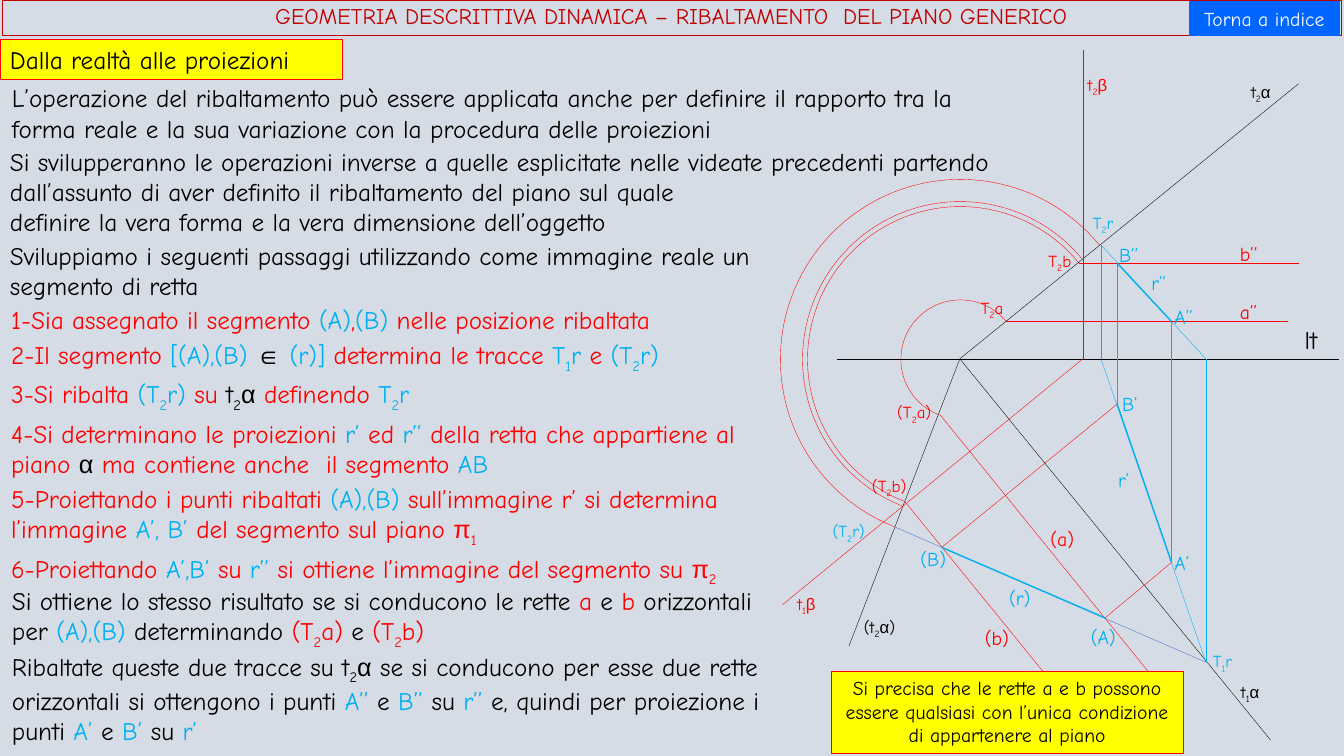
from dataclasses import dataclass, field
from itertools import groupby

from pptx import Presentation
from pptx import util as u
from pptx.dml import color
from pptx.enum import shapes, text
from pptx.oxml import ns, xmlchemy


@dataclass(frozen=True)
class Theme:
    font: str = "Comic Neue"
    symbol_font: str = "Arial"
    symbols: str = "αβπ∈"
    title: int = 16
    body: int = 18
    label: int = 14
    trace: int = 12
    thin: float = 0.25
    bold: float = 1
    # One letter per colour: K black, R red, C cyan, D dark red, W white,
    # Y yellow, B button blue, L line blue, G background grey
    colours: dict = field(default_factory=lambda: {
        key: color.RGBColor.from_string(value) for key, value in {
            "K": "000000", "R": "FF0000", "C": "00B0F0", "D": "C00000", "W": "FFFFFF",
            "Y": "FFFF00", "B": "0066FF", "L": "4472C4", "G": "D6DCE5"}.items()})


theme = Theme()


def write(frame, content, size, frame_format=None, para_format=None):
    """Parts split by | start with a colour letter; _ lowers the next character."""
    frame_values = {"word_wrap": True, "auto_size": text.MSO_AUTO_SIZE.NONE,
                    "vertical_anchor": text.MSO_ANCHOR.TOP, **(frame_format or {})}
    for name, value in frame_values.items():
        setattr(frame, name, value)
    for index, line in enumerate(content.split("\n")):
        para = frame.add_paragraph() if index else frame.paragraphs[0]
        para_values = {"alignment": text.PP_ALIGN.LEFT, **(para_format or {})}
        for name, value in para_values.items():
            setattr(para, name, value)
        for part in line.split("|"):
            marked = [(char, "sub" if before == "_" else
                       "symbol" if char in theme.symbols else "plain")
                      for before, char in zip(part, part[1:]) if char != "_"]
            for kind, group in groupby(marked, key=lambda item: item[1]):
                span = para.add_run()
                span.text = "".join(char for char, _ in group)
                font_values = {"size": u.Pt(size), "bold": span.text == "∈",
                               "name": theme.symbol_font if kind == "symbol" else theme.font}
                for name, value in font_values.items():
                    setattr(span.font, name, value)
                span.font.color.rgb = theme.colours[part[0]]
                if kind == "sub":
                    span.font._element.set("baseline", "-25000")


def add_panel(kind, place, fill=None, line=None):
    panel = page.shapes.add_shape(kind, *map(u.Inches, place))
    panel.shadow.inherit = False
    if fill:
        panel.fill.solid()
        panel.fill.fore_color.rgb = theme.colours[fill]
    else:
        panel.fill.background()
    if line:
        panel.line.color.rgb = theme.colours[line]
        panel.line.width = u.Pt(theme.thin)
    else:
        panel.line.fill.background()
    return panel


deck = Presentation()
deck.slide_width, deck.slide_height = u.Inches(13.33), u.Inches(7.5)
page = deck.slides.add_slide(deck.slide_layouts[1])
page.background.fill.solid()
page.background.fill.fore_color.rgb = theme.colours["G"]
centred = {"alignment": text.PP_ALIGN.CENTER}
middle = {"vertical_anchor": text.MSO_ANCHOR.MIDDLE}

# Title bar and numbered steps in the placeholders
title, steps = page.placeholders
for box, place in ((title, (0.02, 0, 13.28, 0.35)), (steps, (0.01, 2.97, 7.8, 2.79))):
    for name, value in zip(("left", "top", "width", "height"), place):
        setattr(box, name, u.Inches(value))
title.line.color.rgb = theme.colours["D"]
title.line.width = u.Pt(theme.thin)
write(title.text_frame, "DGEOMETRIA DESCRITTIVA DINAMICA – RIBALTAMENTO  DEL PIANO GENERICO",
      theme.title, middle, {**centred, "line_spacing": 0.9})
write(steps.text_frame, "\n".join((
    "R1-Sia assegnato il segmento |C(A)|R,|C(B) |Rnelle posizione ribaltata",
    "R2-Il segmento |C[(A),(B) |K∈|C (r)] |Rdetermina le tracce |CT_1r|R e |C(T_2r)",
    "R3-Si ribalta |C(T_2r) |Rsu |Kt_2α|R definendo |CT_2r",
    "R4-Si determinano le proiezioni |Cr’|R ed |Cr’’ |Rdella retta che appartiene al piano "
    "|Kα|R ma contiene anche  il segmento |CAB",
    "R5-Proiettando i punti ribaltati |C(A),(B) |Rsull’immagine r’ si determina l’immagine "
    "|CA’, B’ |Rdel segmento sul piano π_1",
    "R6-Proiettando |CA’,B’ |Rsu |Cr’’ |Rsi ottiene l’immagine del segmento su π_2",
)), theme.body, para_format={"space_before": u.Pt(3.5)})
for para in steps.text_frame.paragraphs:
    settings = para._p.get_or_add_pPr()
    settings.set("marL", "0")
    settings.set("indent", "0")
    settings.append(xmlchemy.OxmlElement("a:buNone"))

# Explanations around the steps
explanations = (
    (0.02, 0.77, 10.18, 0.71, "KL’operazione del ribaltamento può essere applicata anche per definire "
     "il rapporto tra la forma reale e la sua variazione con la procedura delle proiezioni"),
    (0, 1.4, 9.98, 1.01, "KSi svilupperanno le operazioni inverse a quelle esplicitate nelle videate "
     "precedenti partendo dall’assunto di aver definito il ribaltamento del piano sul quale\n"
     "Kdefinire la vera forma e la vera dimensione dell’oggetto"),
    (0, 2.33, 7.69, 0.71, "KSviluppiamo i seguenti passaggi utilizzando come immagine reale un "
     "segmento di retta"),
    (0.02, 5.76, 7.7, 0.71, "KSi ottiene lo stesso risultato se si conducono le rette |Ra|K e |Rb"
     "|K orizzontali per |C(A),(B) |Kdeterminando |R(T_2a) |Ke |R(T_2b)"),
    (0.02, 6.41, 8.16, 1.01, "KRibaltate queste due tracce su t_2α se si conducono per esse due rette "
     "orizzontali si ottengono i punti |CA’’ |Ke |CB’’ |Ksu |Cr’’ |Ke, quindi per proiezione i punti "
     "|CA’|K e |CB’|K su |Cr’"),
)
for *place, content in explanations:
    box = page.shapes.add_textbox(*map(u.Inches, place))
    write(box.text_frame, content, theme.body)

# Overturning arcs, all about the same centre
for radius, end in ((1.565, 320.59), (1.785, 320.59), (1.515, 320.99), (0.59, 320.99)):
    place = (9.525 - radius, 3.565 - radius, 2 * radius, 2 * radius)
    arc = add_panel(shapes.MSO_SHAPE.ARC, place, line="R")
    for index, degrees in enumerate((111.47, end)):
        arc.adjustments[index] = degrees * 0.6

# Construction lines between named points
origin, beta = (9.52, 3.56), (10.74, 3.56)
a_turned, b_turned = (10.96, 6.13), (9.34, 5.43)
a_plan, b_plan = (11.62, 5.58), (11.08, 4.01)
a_front, b_front = (11.62, 3.19), (11.08, 2.61)
r_trace_1, r_trace_2 = (11.96, 6.57), (10.92, 2.43)
r_foot_1, r_foot_2 = (11.96, 3.56), (10.92, 3.56)
lines = (
    ("K", theme.thin, ((8.3, 3.56), (13.28, 3.56)), (origin, (12.88, 0.83)),
     (origin, (12.6, 7.34)), (origin, (8.42, 6.41))),
    ("R", theme.thin, (beta, (10.74, 0.5)), (beta, (7.76, 6)), (b_plan, b_turned),
     (a_plan, a_turned), ((10.36, 6.68), (8.97, 4.97)), ((11.67, 7.01), (9.32, 4.11)),
     ((10.7, 2.61), (12.88, 2.61)), ((9.98, 3.19), (12.77, 3.19))),
    ("L", theme.thin, ((8.88, 5.23), r_trace_1)),
    ("C", theme.thin, (r_trace_2, r_foot_2), (r_foot_1, r_trace_1), (r_trace_2, r_foot_1),
     (r_foot_2, r_trace_1), (b_front, b_plan), (a_front, a_plan)),
    ("C", theme.bold, (b_turned, a_turned), (b_front, a_front), (b_plan, a_plan)),
)
for colour, weight, *segments in lines:
    for start, end in segments:
        line = page.shapes.add_connector(shapes.MSO_CONNECTOR.STRAIGHT,
                                         *map(u.Inches, start + end))
        line.line.color.rgb = theme.colours[colour]
        line.line.width = u.Pt(weight)
        line._element.find(ns.qn("p:spPr")).append(xmlchemy.OxmlElement("a:effectLst"))

# Names of points, lines and traces
labels = (
    (theme.label, 0.34, (
        (9.03, 5.38, 0.51, "C(B)"), (10.72, 6.15, 0.51, "C(A)"), (11.03, 3.84, 0.51, "CB’"),
        (11.55, 5.42, 0.51, "CA’"), (11, 2.36, 0.51, "CB’’"), (11.32, 2.64, 0.62, "Cr’’"),
        (10.99, 4.59, 0.62, "Cr’"), (11.55, 2.98, 0.62, "CA’’"), (9.91, 5.76, 0.62, "C(r)"),
        (9.67, 6.16, 0.62, "R(b)"), (10.32, 5.18, 0.62, "R(a)"), (12.2, 2.35, 0.39, "Rb’’"),
        (12.2, 2.93, 0.39, "Ra’’"))),
    (theme.trace, 0.3, (
        (11.93, 6.41, 0.51, "CT_1r"), (10.74, 2.06, 0.64, "CT_2r"), (8.16, 5.12, 0.79, "C(T_2r)"),
        (12.21, 6.71, 0.46, "Kt_1α"), (12.31, 0.76, 0.46, "Kt_2α"), (7.81, 5.84, 0.46, "Rt_1β"),
        (10.69, 0.69, 0.46, "Rt_2β"), (8.47, 6.07, 0.59, "K(t_2α)"), (8.55, 4.67, 0.79, "R(T_2b)"),
        (8.8, 3.94, 0.79, "R(T_2a)"), (10.3, 2.44, 0.51, "RT_2b"), (9.63, 2.9, 0.79, "RT_2a"))),
    (theme.body, 0.4, ((12.84, 3.17, 0.49, "Klt"),)),
)
for size, height, names in labels:
    for left, top, width, content in names:
        box = page.shapes.add_textbox(*map(u.Inches, (left, top, width, height)))
        write(box.text_frame, content, size, {"margin_right": 0})

# Heading, note and return button
heading = add_panel(shapes.MSO_SHAPE.RECTANGLE, (0, 0.39, 3.39, 0.4), "Y", "R")
write(heading.text_frame, "KDalla realtà alle proiezioni", theme.body)
note = add_panel(shapes.MSO_SHAPE.RECTANGLE, (8.24, 6.66, 3.5, 0.81), "Y", "R")
write(note.text_frame, "KSi precisa che le rette a e b possono essere qualsiasi con l’unica "
      "condizione di appartenere al piano", theme.label, para_format=centred)
button = add_panel(shapes.MSO_SHAPE.ACTION_BUTTON_CUSTOM, (11.79, 0.01, 1.5, 0.35), "B")
write(button.text_frame, "WTorna a indice", theme.label, middle, centred)

deck.save("out.pptx")
